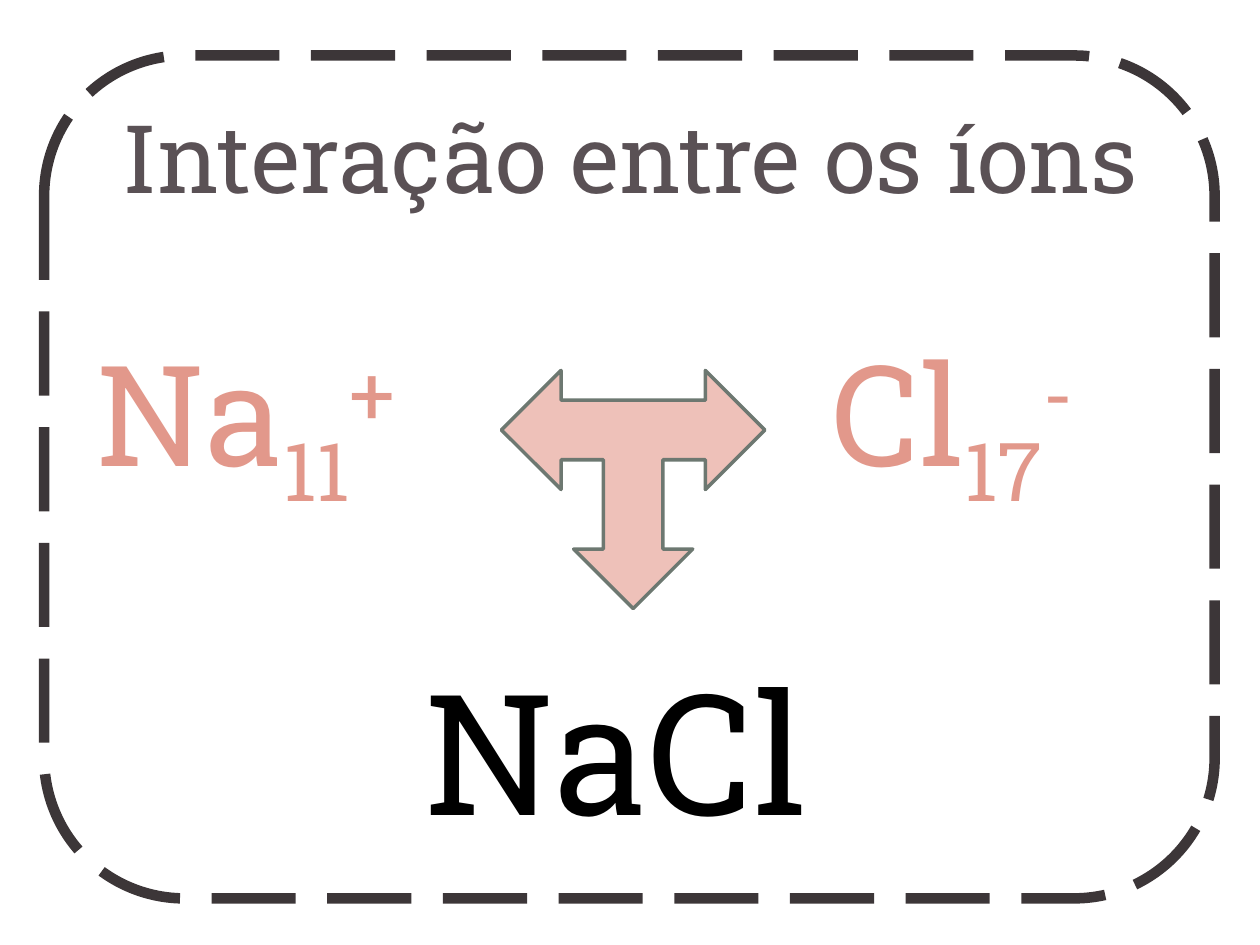
from pptx import Presentation
from pptx.dml.color import RGBColor
from pptx.enum.dml import MSO_LINE
from pptx.enum.shapes import MSO_SHAPE
from pptx.enum.text import MSO_ANCHOR, MSO_AUTO_SIZE, PP_ALIGN
from pptx.util import Pt

COLORS = {
    "heading": "5A5155",
    "ion": "E2988B",
    "compound": "000000",
    "arrow": "EEC1B9",
    "arrow_edge": "6D7871",
    "frame": "3C3638",
}
FONT = "Roboto Slab"
HEADING = "Interação entre os íons"
HEADING_BOX = (36.72, 21.6, 647.28, 186.48)
SUBSCRIPT, SUPERSCRIPT = -25000, 30000
FORMULAS = [
    ([("Cl", 0), ("17", SUBSCRIPT), ("-", SUPERSCRIPT)], (468, 182.88, 180, 104.4), 80, "ion", False),
    ([("Na", 0), ("11", SUBSCRIPT), ("+", SUPERSCRIPT)], (48.24, 182.88, 266.4, 104.4), 80, "ion", True),
    ([("NaCl", 0)], (235.44, 366.48, 253.44, 123.84), 96, "compound", False),
]
ARROW_BOX = (286.56, 211.68, 150.48, 136.08)
FRAME_BOX = (25.2, 31.68, 668.88, 481.68)


def points(box):
    """Convert a box of numbers to point lengths."""
    return [Pt(length) for length in box]


def rgb(role):
    """Return the colour of a role."""
    return RGBColor.from_string(COLORS[role])


def style(paragraph, size, role):
    """Set the font of a paragraph."""
    paragraph.font.name = FONT
    paragraph.font.size = Pt(size)
    paragraph.font.color.rgb = rgb(role)


def add_heading(slide):
    """Fill and place the title placeholder."""
    heading = slide.shapes.title
    heading.left, heading.top, heading.width, heading.height = points(HEADING_BOX)
    frame = heading.text_frame
    frame.text = HEADING
    frame.vertical_anchor = MSO_ANCHOR.MIDDLE
    frame.margin_bottom = Pt(55)
    frame.paragraphs[0].alignment = PP_ALIGN.CENTER
    style(frame.paragraphs[0], 54, "heading")


def add_formula(slide, parts, box, size, role, wrap):
    """Add a chemical formula with raised and lowered parts."""
    formula = slide.shapes.add_textbox(*points(box)).text_frame
    formula.word_wrap = wrap
    formula.auto_size = MSO_AUTO_SIZE.SHAPE_TO_FIT_TEXT
    paragraph = formula.paragraphs[0]
    style(paragraph, size, role)
    for text, baseline in parts:
        run = paragraph.add_run()
        run.text = text
        if baseline:
            run._r.get_or_add_rPr().set("baseline", str(baseline))


def add_outline(slide, preset, box, role, width):
    """Add an outlined preset shape."""
    outline = slide.shapes.add_shape(preset, *points(box))
    outline.shadow.inherit = False
    outline.line.color.rgb = rgb(role)
    outline.line.width = Pt(width)
    return outline


def main():
    """Build the slide."""
    presentation = Presentation()
    presentation.slide_width, presentation.slide_height = Pt(720), Pt(540)
    slide = presentation.slides.add_slide(presentation.slide_layouts[5])
    add_heading(slide)
    ions, compound = FORMULAS[:2], FORMULAS[2]
    for ion in ions:
        add_formula(slide, *ion)
    arrow = add_outline(slide, MSO_SHAPE.LEFT_RIGHT_UP_ARROW, ARROW_BOX, "arrow_edge", 2)
    arrow.rotation = 180
    arrow.fill.solid()
    arrow.fill.fore_color.rgb = rgb("arrow")
    add_formula(slide, *compound)
    border = add_outline(slide, MSO_SHAPE.ROUNDED_RECTANGLE, FRAME_BOX, "frame", 6)
    border.fill.background()
    border.line.dash_style = MSO_LINE.LONG_DASH
    presentation.save("out.pptx")


if __name__ == "__main__":
    main()
